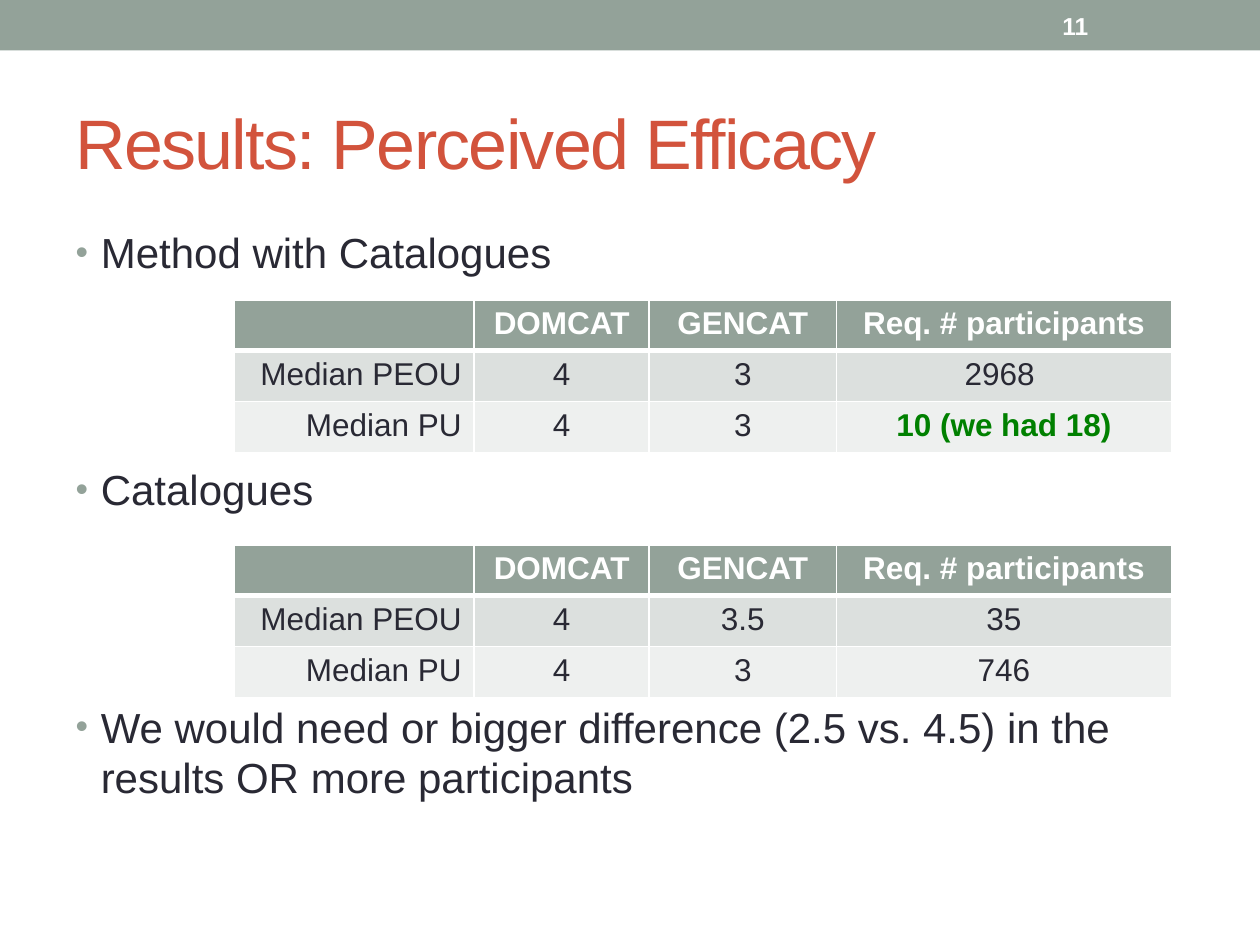
from lxml import etree
from pptx import Presentation
from pptx.dml.color import RGBColor
from pptx.enum import shapes, text
from pptx.oxml.ns import qn
from pptx.util import Pt

SAGE = RGBColor(0x93, 0xA2, 0x99)
RUST = RGBColor(0xD2, 0x53, 0x3C)
INK = RGBColor(0x29, 0x29, 0x34)
WHITE = RGBColor(0xFF, 0xFF, 0xFF)
GREEN = RGBColor(0x00, 0x80, 0x00)
ROW_FILLS = [SAGE, RGBColor(0xDC, 0xE0, 0xDE), RGBColor(0xEE, 0xF0, 0xEF)]
ALIGN = text.PP_ALIGN

HEADER = ["", "DOMCAT", "GENCAT", "Req. # participants"]
TABLES = [
    (171.5, [["Median PEOU", "4", "3", "2968 "],
             ["Median PU", "4", "3", "10 (we had 18)"]]),
    (311.5, [["Median PEOU", "4", "3.5", "35"],
             ["Median PU", "4", "3", "746"]]),
]
COLUMN_WIDTHS = [137, 100, 107, 191.5]
ROW_HEIGHTS = [27, 29.2, 29.2]
POINTS = [
    "Method with Catalogues",
    "Catalogues",
    "We would need or bigger difference (2.5 vs. 4.5) in the results OR more participants",
]


def write(para, words, size, color, bold=False):
    span = para.add_run()
    span.text = words
    formats = {"name": "Arial", "size": Pt(size), "bold": bold}
    for name, value in formats.items():
        setattr(span.font, name, value)
    span.font.color.rgb = color
    return span


def place(shape, left, top, width, height):
    frame = {"left": left, "top": top, "width": width, "height": height}
    for name, value in frame.items():
        setattr(shape, name, Pt(value))


deck = Presentation()
deck.slide_width, deck.slide_height = Pt(720), Pt(540)
page = deck.slides.add_slide(deck.slide_layouts[1])

# Top band and page number
band = page.shapes.add_shape(shapes.MSO_SHAPE.RECTANGLE, 0, 0, Pt(720), Pt(28.8))
band.shadow.inherit = False
band.fill.solid()
band.fill.fore_color.rgb = SAGE
band.line.fill.background()

number = page.shapes.add_textbox(Pt(600), Pt(1.5), Pt(84), Pt(26))
number.text_frame.word_wrap = True
number.text_frame.vertical_anchor = text.MSO_ANCHOR.MIDDLE
write(number.text_frame.paragraphs[0], "11", 14, WHITE, bold=True)

# Title
title = page.shapes.title
place(title, 36, 42, 648, 78)
title.text_frame.vertical_anchor = text.MSO_ANCHOR.MIDDLE
title.text_frame.auto_size = text.MSO_AUTO_SIZE.NONE
heading = title.text_frame.paragraphs[0]
heading.alignment = ALIGN.LEFT
span = write(heading, "Results: Perceived Efficacy", 40, RUST)
span.font._element.set("spc", "-100")

# Bullets, spaced to leave room for the tables
body = page.placeholders[1]
place(body, 36, 126, 648, 384)
body.text_frame.auto_size = text.MSO_AUTO_SIZE.NONE
for index, words in enumerate(POINTS):
    para = body.text_frame.paragraphs[0] if index == 0 else body.text_frame.add_paragraph()
    para.space_before = Pt(106.7 if index else 4.8)
    write(para, words, 24, INK)
    settings = para._p.get_or_add_pPr()
    settings.set("marL", str(Pt(14.4)))
    settings.set("indent", str(-Pt(14.4)))
    bullet_color = etree.SubElement(settings, qn("a:buClr"))
    etree.SubElement(bullet_color, qn("a:srgbClr"), val=str(SAGE))
    etree.SubElement(settings, qn("a:buSzPct"), val="85000")
    etree.SubElement(settings, qn("a:buFont"), typeface="Arial")
    etree.SubElement(settings, qn("a:buChar"), char="•")

# Tables
for top, rows in TABLES:
    table = page.shapes.add_table(3, 4, Pt(134), Pt(top), Pt(sum(COLUMN_WIDTHS)),
                                  Pt(sum(ROW_HEIGHTS))).table
    for column, width in zip(table.columns, COLUMN_WIDTHS):
        column.width = Pt(width)
    for r, words_in_row in enumerate([HEADER] + rows):
        table.rows[r].height = Pt(ROW_HEIGHTS[r])
        for c, words in enumerate(words_in_row):
            cell = table.cell(r, c)
            borders = {"lnL": 1, "lnR": 1, "lnT": 3 if r == 1 else 1, "lnB": 3 if r == 0 else 1}
            for side, weight in borders.items():
                line = etree.SubElement(cell._tc.get_or_add_tcPr(), qn("a:" + side),
                                        w=str(Pt(weight)))
                paint = etree.SubElement(line, qn("a:solidFill"))
                etree.SubElement(paint, qn("a:srgbClr"), val=str(WHITE))
            cell.fill.solid()
            cell.fill.fore_color.rgb = ROW_FILLS[r]
            para = cell.text_frame.paragraphs[0]
            para.alignment = ALIGN.RIGHT if r and c == 0 else ALIGN.CENTER
            enough = words.startswith("10 ")
            color = WHITE if r == 0 else GREEN if enough else INK
            if words:
                write(para, words, 18, color, bold=r == 0 or enough)

deck.save("out.pptx")
